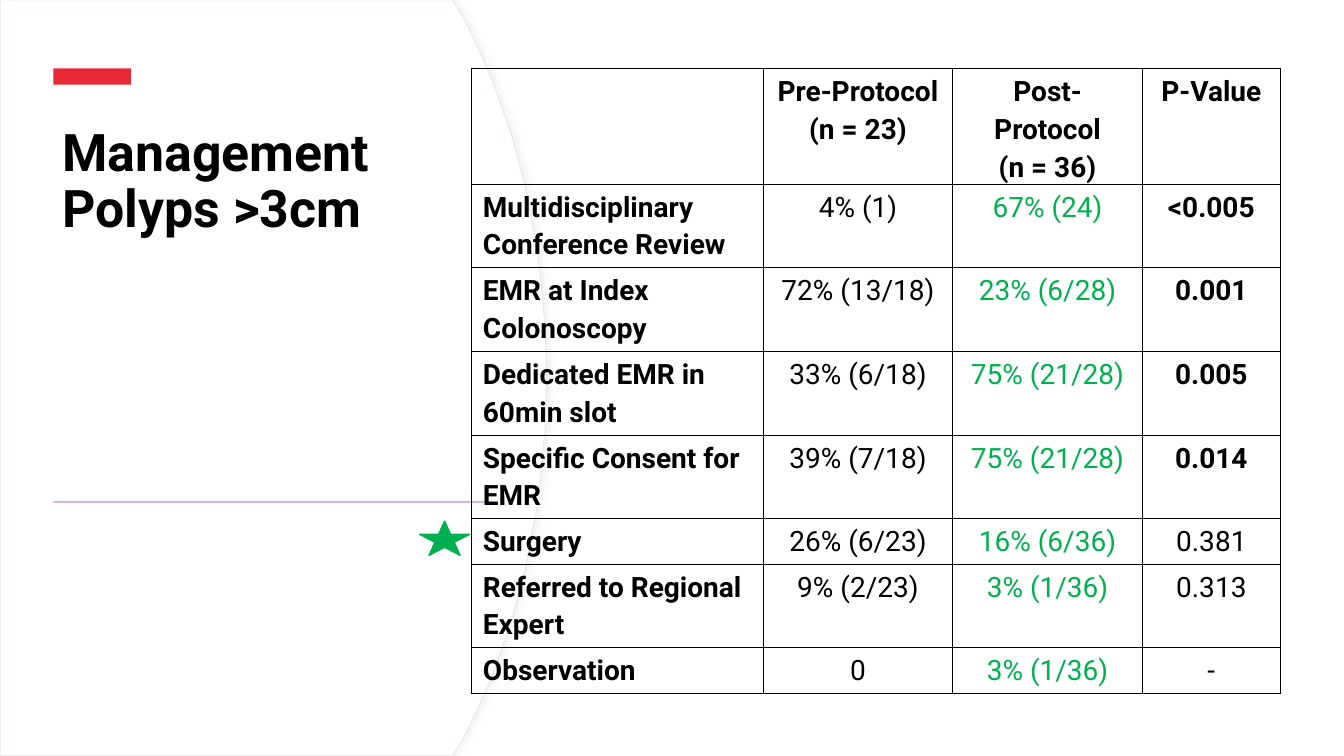
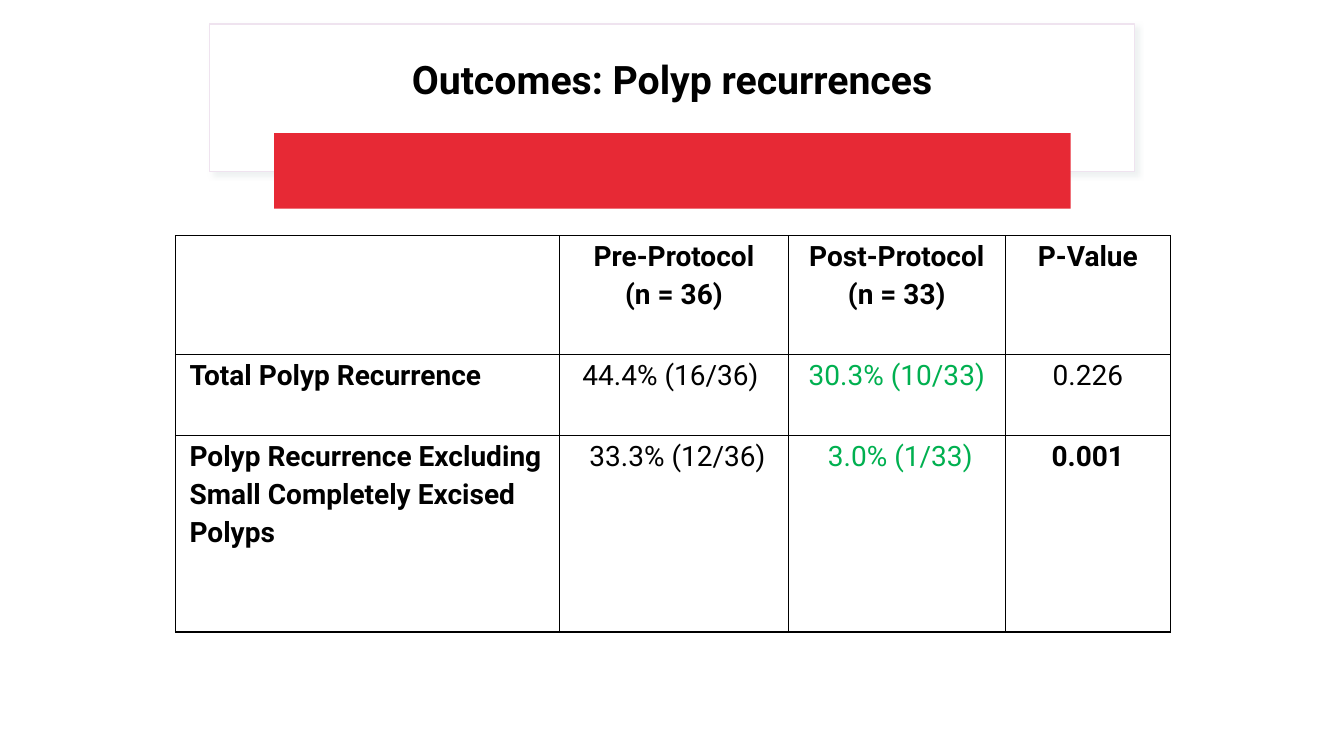
from lxml import etree
from pptx import Presentation
from pptx.dml.color import RGBColor
from pptx.enum.shapes import MSO_SHAPE
from pptx.enum.text import MSO_ANCHOR, MSO_AUTO_SIZE, PP_ALIGN
from pptx.oxml.ns import qn
from pptx.util import Pt

PX = 9144  # 100 px to the inch
SLIDE_W, SLIDE_H = 1333, 750
TITLE_ONLY = 5
FONT = "Roboto"
COLORS = {
    "white": "FFFFFF", "black": "000000", "red": "E72935", "green": "00B050",
    "lilac": "D6B9D8", "outline": "EFE3EF", "arc_shadow": "D9D9D9",
    "card_shadow": "C8D3D3",
}
RECT, STAR = MSO_SHAPE.RECTANGLE, MSO_SHAPE.STAR_5_POINT
LEFT, CENTER = PP_ALIGN.LEFT, PP_ALIGN.CENTER
MIDDLE, BOTTOM = MSO_ANCHOR.MIDDLE, MSO_ANCHOR.BOTTOM

MANAGEMENT = [
    ("", "Pre-Protocol\n(n = 23)", "Post-Protocol\n(n = 36)", "P-Value"),
    ("Multidisciplinary Conference Review", "4% (1)", "67% (24)", "<0.005"),
    ("EMR at Index Colonoscopy", "72% (13/18)", "23% (6/28)", "0.001"),
    ("Dedicated EMR in 60min slot", "33% (6/18)", "75% (21/28)", "0.005"),
    ("Specific Consent for EMR", "39% (7/18)", "75% (21/28)", "0.014"),
    ("Surgery", "26% (6/23)", "16% (6/36)", "0.381"),
    ("Referred to Regional Expert", "9% (2/23)", "3% (1/36)", "0.313"),
    ("Observation", "0", "3% (1/36)", "-"),
]
RECURRENCE = [
    ("", "Pre-Protocol\n(n = 36)", "Post-Protocol\n(n = 33)", "P-Value"),
    ("Total Polyp Recurrence", "44.4% (16/36) ", "30.3% (10/33)", "0.226"),
    ("Polyp Recurrence Excluding Small Completely Excised Polyps",
     " 33.3% (12/36)", " 3.0% (1/33)", "0.001"),
]
SIGNIFICANT = {"<0.005", "0.001", "0.005", "0.014"}


def px(*lengths):
    return [round(length * PX) for length in lengths]


def rgb(name):
    return RGBColor.from_string(COLORS[name])


def add_color(parent, name):
    fill = etree.SubElement(parent, qn("a:solidFill"))
    etree.SubElement(fill, qn("a:srgbClr"), val=COLORS[name])


def paint(shape, fill, line=None, width=1):
    shape.shadow.inherit = False
    shape.fill.solid()
    shape.fill.fore_color.rgb = rgb(fill)
    if line:
        shape.line.color.rgb = rgb(line)
        shape.line.width = Pt(width)
    else:
        shape.line.fill.background()


def add_block(slide, box, fill, line=None, kind=RECT):
    block = slide.shapes.add_shape(kind, *px(*box))
    paint(block, fill, line)
    return block


def cast_shadow(shape, color, degrees):
    effects = shape._element.spPr.find(qn("a:effectLst"))
    shadow = etree.SubElement(
        effects, qn("a:outerShdw"), blurRad=str(Pt(4)), dist=str(Pt(3)),
        dir=str(degrees * 60000), algn="tl", rotWithShape="0")
    tint = etree.SubElement(shadow, qn("a:srgbClr"), val=COLORS[color])
    etree.SubElement(tint, qn("a:alpha"), val="30000")


def set_title(slide, text, box, size, align, anchor):
    """Format the title placeholder and bring it in front of the backdrop."""
    title = slide.shapes.title
    slide.shapes._spTree.append(title._element)
    title.left, title.top, title.width, title.height = px(*box)
    frame = title.text_frame
    frame.text = text
    frame.word_wrap = True
    frame.auto_size = MSO_AUTO_SIZE.NONE
    frame.vertical_anchor = anchor
    style_paragraph(frame.paragraphs[0], size, align, 0.9)


def style_paragraph(paragraph, size, align, spacing, bold=True, color="black"):
    paragraph.alignment = align
    paragraph.line_spacing = spacing
    font = paragraph.font
    font.name, font.size, font.bold = FONT, Pt(size), bold
    font.color.rgb = rgb(color)


def add_borders(cell):
    properties = cell._tc.get_or_add_tcPr()
    for side in ("lnL", "lnR", "lnT", "lnB"):
        add_color(etree.SubElement(properties, qn(f"a:{side}"), w=str(Pt(1))),
                  "black")


def add_results(slide, left, top, columns, heights, rows, side_inset, top_inset):
    """Table of labels, pre- and post-protocol rates, and p-values."""
    table = slide.shapes.add_table(
        len(rows), len(columns),
        *px(left, top, sum(columns), sum(heights))).table
    table.first_row = table.horz_banding = False
    for column, width in zip(table.columns, px(*columns)):
        column.width = width
    for row, height in zip(table.rows, px(*heights)):
        row.height = height
    for r, values in enumerate(rows):
        for c, value in enumerate(values):
            cell = table.cell(r, c)
            add_borders(cell)
            cell.fill.background()
            cell.margin_left = cell.margin_right = px(side_inset)[0]
            cell.margin_top, cell.margin_bottom = px(top_inset, 0)
            cell.text = value
            for paragraph in cell.text_frame.paragraphs:
                style_paragraph(
                    paragraph, 20, CENTER if c else LEFT, 1.15,
                    bold=r == 0 or c == 0 or value in SIGNIFICANT,
                    color="green" if r and c == 2 else "black")


def bezier(start, control_1, control_2, end, steps=24):
    for step in range(1, steps + 1):
        t = step / steps
        weights = ((1 - t) ** 3, 3 * t * (1 - t) ** 2, 3 * t * t * (1 - t), t ** 3)
        yield tuple(sum(w * p for w, p in zip(weights, axis))
                    for axis in zip(start, control_1, control_2, end))


def add_arc_panel(slide):
    upper = [(449, 0), (457, 13),
             *bezier((457, 13), (511, 114), (542, 239), (542, 375))]
    lower = [(x, SLIDE_H - y) for x, y in reversed(upper[:-1])]
    builder = slide.shapes.build_freeform(0, 0, scale=PX)
    builder.add_line_segments([*upper, *lower, (0, SLIDE_H)], close=True)
    panel = builder.convert_to_shape()
    paint(panel, "white", "outline", 0.75)
    cast_shadow(panel, "arc_shadow", 0)


def add_title_card(slide, left, top, width, height):
    card = add_block(slide, (left, top, width, height), "white", "outline")
    cast_shadow(card, "card_shadow", 45)
    set_title(slide, "Outcomes: Polyp recurrences",
              (left + 22, top + 10, width - 44, 95), 28, CENTER, MIDDLE)
    add_block(slide, (left + 64, top + 108, width - 127, 75), "red")


def build_management(slide):
    add_arc_panel(slide)
    set_title(slide, "Management\vPolyps >3cm", (52, 123, 440, 119),
              37, LEFT, BOTTOM)
    add_block(slide, (53, 68, 77, 16), "red")
    add_block(slide, (53, 497, 440, 2), "lilac")
    add_results(slide, 468, 68, (289, 188, 188, 137),
                (114, 83, 83, 83, 83, 45, 83, 45), MANAGEMENT, 11, 2)
    add_block(slide, (416, 517, 50, 34), "green", "green", STAR)


def build_recurrence(slide):
    add_title_card(slide, 208, 24, 917, 146)
    add_results(slide, 174, 234, (381, 227, 215, 164), (118, 80, 195),
                RECURRENCE, 14, 0)


def main():
    deck = Presentation()
    deck.slide_width, deck.slide_height = px(SLIDE_W, SLIDE_H)
    for build in (build_management, build_recurrence):
        build(deck.slides.add_slide(deck.slide_layouts[TITLE_ONLY]))
    deck.save("out.pptx")


if __name__ == "__main__":
    main()
